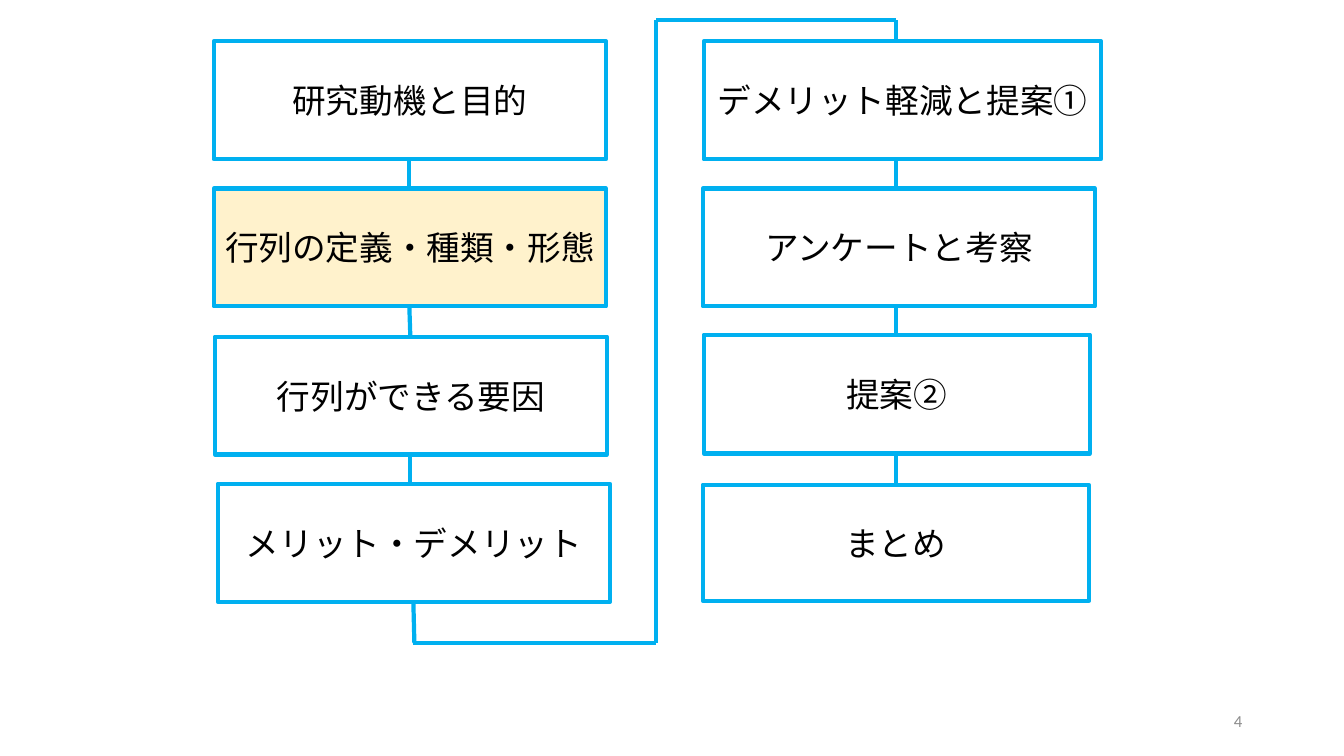
import pptx
import pptx.util
import pptx.dml.color
import pptx.enum.shapes
import pptx.enum.text
import pptx.oxml
import pptx.oxml.ns
from lxml import etree

Inches = pptx.util.Inches
Pt = pptx.util.Pt

THEME = {
    "font": "Calibri",
    "border": "00B0F0",
    "plain": "FFFFFF",
    "current": "FFF2CC",
    "text": "000000",
    "number": "8C8C8C",
    "topic_size": 24,
    "number_size": 12,
    "box_line": 3,
    "route_line": 2.75,
    "text_outline": 0.75,
}


def color(name):
    return pptx.dml.color.RGBColor.from_string(THEME[name])


def write_text(shape, text, size, color_name, alignment):
    frame = shape.text_frame
    frame.text = text
    frame.word_wrap = True
    frame.vertical_anchor = pptx.enum.text.MSO_ANCHOR.MIDDLE
    paragraph = frame.paragraphs[0]
    paragraph.alignment = alignment
    font = paragraph.runs[0].font
    font.name = THEME["font"]
    font.size = Pt(THEME[size])
    font.color.rgb = color(color_name)
    return paragraph.runs[0]


presentation = pptx.Presentation()
presentation.slide_width = Inches(13.33)
presentation.slide_height = Inches(7.5)
slide = presentation.slides.add_slide(presentation.slide_layouts[6])

links = [
    (4.06, 1.58, 4.06, 1.87, "box_line"),
    (4.06, 3.04, 4.07, 3.34, "box_line"),
    (4.07, 4.51, 4.07, 5.08, "box_line"),
    (4.1, 5.97, 4.11, 6.38, "box_line"),
    (4.1, 6.38, 6.51, 6.38, "route_line"),
    (6.51, 0.2, 6.51, 6.38, "route_line"),
    (6.51, 0.2, 8.89, 0.2, "route_line"),
    (8.89, 0.2, 8.89, 0.41, "box_line"),
    (8.89, 1.59, 8.89, 1.85, "box_line"),
    (8.89, 2.75, 8.89, 3.32, "box_line"),
    (8.89, 4.5, 8.89, 4.81, "box_line"),
]
for start_x, start_y, end_x, end_y, weight in links:
    connector = slide.shapes.add_connector(
        pptx.enum.shapes.MSO_CONNECTOR.STRAIGHT,
        Inches(start_x), Inches(start_y), Inches(end_x), Inches(end_y))
    connector.line.color.rgb = color("border")
    connector.line.width = Pt(THEME[weight])
    etree.SubElement(connector._element.spPr, pptx.oxml.ns.qn("a:effectLst"))

topics = [
    ("研究動機と目的", 2.12, 0.41, 3.89, 1.17, "plain"),
    ("行列の定義・種類・形態", 2.12, 1.87, 3.89, 1.17, "current"),
    ("行列ができる要因", 2.13, 3.34, 3.89, 1.17, "plain"),
    ("メリット・デメリット", 2.16, 4.8, 3.89, 1.17, "plain"),
    ("デメリット軽減と提案①", 6.98, 0.41, 3.94, 1.17, "plain"),
    ("アンケートと考察", 6.97, 1.87, 3.89, 1.17, "plain"),
    ("提案②", 6.98, 3.32, 3.83, 1.18, "plain"),
    ("まとめ", 6.97, 4.81, 3.83, 1.15, "plain"),
]
for text, left, top, width, height, fill in topics:
    box = slide.shapes.add_shape(
        pptx.enum.shapes.MSO_SHAPE.RECTANGLE,
        Inches(left), Inches(top), Inches(width), Inches(height))
    box.shadow.inherit = False
    box.fill.solid()
    box.fill.fore_color.rgb = color(fill)
    box.line.color.rgb = color("border")
    box.line.width = Pt(THEME["box_line"])
    run = write_text(box, text, "topic_size", "text", pptx.enum.text.PP_ALIGN.CENTER)
    outline = pptx.oxml.parse_xml(
        f'<a:ln {pptx.oxml.ns.nsdecls("a")} w="{Pt(THEME["text_outline"])}">'
        f'<a:solidFill><a:srgbClr val="{THEME["text"]}"/></a:solidFill></a:ln>')
    run.font._element.insert(0, outline)

page_number = slide.shapes.add_textbox(Inches(9.42), Inches(6.95), Inches(3), Inches(0.4))
write_text(page_number, "4", "number_size", "number", pptx.enum.text.PP_ALIGN.RIGHT)

presentation.save("out.pptx")
